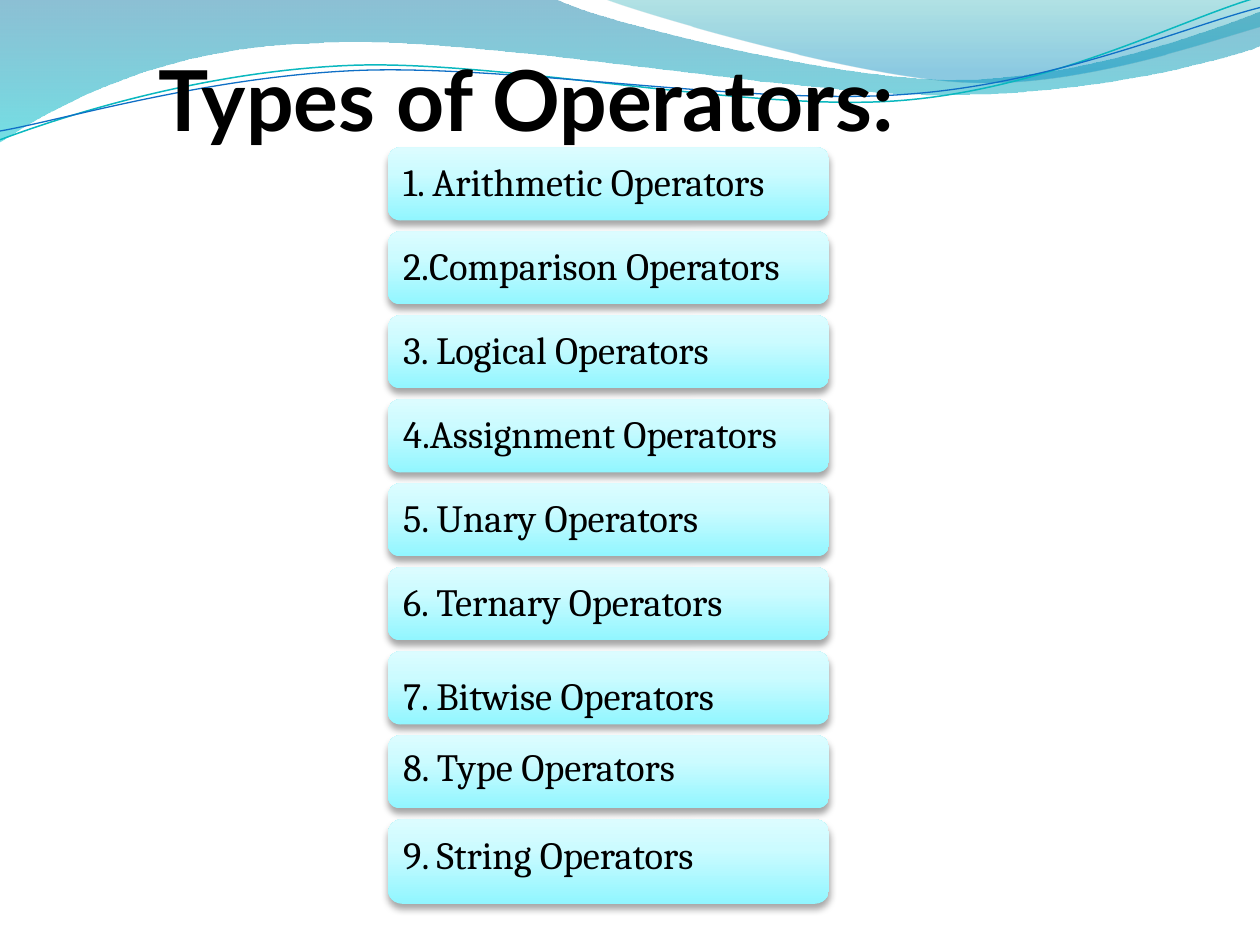
from lxml.etree import SubElement
from pptx import Presentation
from pptx.dml.color import RGBColor
from pptx.enum.shapes import MSO_SHAPE
from pptx.enum.text import MSO_ANCHOR, MSO_AUTO_SIZE, PP_ALIGN
from pptx.oxml.ns import qn
from pptx.util import Inches, Pt

BLACK = RGBColor(0x00, 0x00, 0x00)
TEAL = RGBColor(0x0A, 0xB8, 0xBF)
BLUE = RGBColor(0x0F, 0x6F, 0xC6)
DEEP_BLUE = RGBColor(0x00, 0x74, 0xA1)
TURQUOISE = RGBColor(0x00, 0xC6, 0xCF)
SEA_GREEN = RGBColor(0x00, 0xA1, 0xA9)
SKY_BLUE = RGBColor(0x00, 0x8B, 0xBF)
CYAN = RGBColor(0x91, 0xF6, 0xFF)
PALE_CYAN = RGBColor(0xCC, 0xFB, 0xFF)
LIGHT_CYAN = RGBColor(0xDC, 0xFC, 0xFF)

TITLE = "Types of Operators:"
OPERATORS = [
    "1. Arithmetic Operators", "2.Comparison Operators", "3. Logical Operators",
    "4.Assignment Operators", "5. Unary Operators", "6. Ternary Operators",
    "7. Bitwise Operators", "8. Type Operators", "9. String Operators",
]
BAR_LEFT, BAR_TOP, BAR_PITCH, BAR_WIDTH = 3.08, 1.17, 2 / 3, 3.5
BAR_HEIGHT, LABEL_INSET, LABEL_HEIGHT = 0.58, 0.03, 0.52
BAR_HEIGHTS = {8: 0.67}
LABEL_DROPS = {6: 0.11}
LABEL_HEIGHTS = {7: 0.47, 8: 0.54}
BAR_STOPS = [(0, CYAN, 100), (65, PALE_CYAN, 100), (100, LIGHT_CYAN, 100)]

BANDS = [
    {"start": (-0.01, -0.01),
     "segments": [
         [(4.4, -0.01)],
         [(4.76, 0.17), (6.64, 0.63), (7.58, 0.63)],
         [(8.53, 0.63), (9.58, 0.26), (10, 0.09)],
         [(10.01, 0.36)],
         [(9.83, 0.44), (8.7, 0.76), (7.46, 0.75)],
         [(6.22, 0.75), (3.82, 0.28), (2.57, 0.34)],
         [(1.29, 0.36), (0.46, 0.83), (-0.01, 1.13)]],
     "stops": [(0, DEEP_BLUE, 45), (100, TURQUOISE, 55)]},
    {"start": (4.79, -0.01),
     "segments": [
         [(5.09, 0.11), (6.82, 0.62), (7.69, 0.65)],
         [(8.56, 0.69), (9.61, 0.32), (10, 0.21)],
         [(10, -0.01)]],
     "stops": [(0, SEA_GREEN, 30), (80, SKY_BLUE, 45)]},
]
WAVES = [
    {"start": (0, 1.11),
     "segments": [
         [(0.48, 0.93), (1.58, 0.57), (2.77, 0.52)],
         [(3.95, 0.47), (5.93, 0.89), (7.13, 0.8)],
         [(8.33, 0.71), (9.38, 0.15), (9.98, -0.02)]],
     "color": TEAL, "width": 0.85},
    {"start": (0, 1.04),
     "segments": [
         [(0.47, 0.96), (1.64, 0.61), (2.83, 0.56)],
         [(4.03, 0.51), (5.97, 0.84), (7.17, 0.75)],
         [(8.36, 0.67), (9.41, 0.21), (10, 0.06)]],
     "color": BLUE, "width": 0.75},
]


def apply(target, **values):
    for name, value in values.items():
        setattr(target, name, value)


def add_color(parent, color, opacity):
    node = SubElement(parent, qn("a:srgbClr"), val=str(color))
    if opacity < 100:
        SubElement(node, qn("a:alpha"), val=str(opacity * 1000))


def set_gradient(shape, stops, angle):
    shape.fill.gradient()
    gradient = shape._element.spPr.find(qn("a:gradFill"))
    for child in list(gradient):
        gradient.remove(child)
    stop_list = SubElement(gradient, qn("a:gsLst"))
    for position, color, opacity in stops:
        stop = SubElement(stop_list, qn("a:gs"), pos=str(position * 1000))
        add_color(stop, color, opacity)
    SubElement(gradient, qn("a:lin"), ang=str(angle * 60000), scaled="0")


def set_shadow(shape):
    shape.shadow.inherit = False
    effects = shape._element.spPr.find(qn("a:effectLst"))
    shadow = SubElement(effects, qn("a:outerShdw"), blurRad=str(Pt(4)),
                        dist=str(Pt(3)), dir=str(90 * 60000), rotWithShape="0")
    add_color(shadow, BLACK, 35)


def add_curve(page, start, segments, close):
    points = [(Inches(x), Inches(y)) for segment in segments for x, y in segment]
    builder = page.shapes.build_freeform(Inches(start[0]), Inches(start[1]), scale=1.0)
    builder.add_line_segments(points, close=close)
    shape = builder.convert_to_shape()
    shape.shadow.inherit = False
    lines = iter(list(shape._element.iter(qn("a:lnTo"))))
    for segment in segments:
        parts = [next(lines) for _ in segment]
        if len(parts) == 3:
            outline = parts[0].getparent()
            curve = outline.makeelement(qn("a:cubicBezTo"))
            outline.replace(parts[0], curve)
            for part in parts:
                curve.append(part[0])
            for part in parts[1:]:
                outline.remove(part)
    return shape


def add_backdrop(page):
    shapes = []
    for band in BANDS:
        shape = add_curve(page, band["start"], band["segments"], True)
        set_gradient(shape, band["stops"], 90)
        shape.line.fill.background()
        shapes.append(shape)
    for wave in WAVES:
        shape = add_curve(page, wave["start"], wave["segments"], False)
        shape.fill.background()
        shape.line.color.rgb = wave["color"]
        shape.line.width = Pt(wave["width"])
        shapes.append(shape)
    for shape in shapes:
        page.slide_layout.shapes._spTree.append(shape._element)


def format_text(para, **font):
    para.alignment = PP_ALIGN.LEFT
    apply(para.runs[0].font, **font)
    para.runs[0].font.color.rgb = BLACK


def add_title(page):
    box = page.shapes.title
    apply(box, left=Inches(0.5), top=Inches(0.25), width=Inches(8.08), height=Inches(1.01))
    apply(box.text_frame, text=TITLE, word_wrap=True, auto_size=MSO_AUTO_SIZE.NONE,
          vertical_anchor=MSO_ANCHOR.TOP, margin_left=Inches(0.76), margin_top=Inches(0.13))
    format_text(box.text_frame.paragraphs[0], name="Lato", size=Pt(48), bold=True)


def add_bar(page, index, label):
    top = BAR_TOP + index * BAR_PITCH
    group = page.shapes.add_group_shape()
    bar = group.shapes.add_shape(
        MSO_SHAPE.ROUNDED_RECTANGLE, Inches(BAR_LEFT), Inches(top),
        Inches(BAR_WIDTH), Inches(BAR_HEIGHTS.get(index, BAR_HEIGHT)))
    set_gradient(bar, BAR_STOPS, 270)
    bar.line.fill.background()
    set_shadow(bar)
    box = group.shapes.add_textbox(
        Inches(BAR_LEFT + LABEL_INSET), Inches(top + LABEL_DROPS.get(index, LABEL_INSET)),
        Inches(BAR_WIDTH - 2 * LABEL_INSET), Inches(LABEL_HEIGHTS.get(index, LABEL_HEIGHT)))
    inset = Inches(0.09)
    apply(box.text_frame, text=label, word_wrap=True, vertical_anchor=MSO_ANCHOR.MIDDLE,
          margin_left=inset, margin_right=inset, margin_top=inset, margin_bottom=inset)
    para = box.text_frame.paragraphs[0]
    para.line_spacing = 0.9
    format_text(para, name="Cambria", size=Pt(22))


def main():
    deck = Presentation()
    apply(deck, slide_width=Inches(10), slide_height=Inches(7.5))
    page = deck.slides.add_slide(deck.slide_layouts[5])
    add_backdrop(page)
    add_title(page)
    for index, label in enumerate(OPERATORS):
        add_bar(page, index, label)
    deck.save("out.pptx")


if __name__ == "__main__":
    main()
